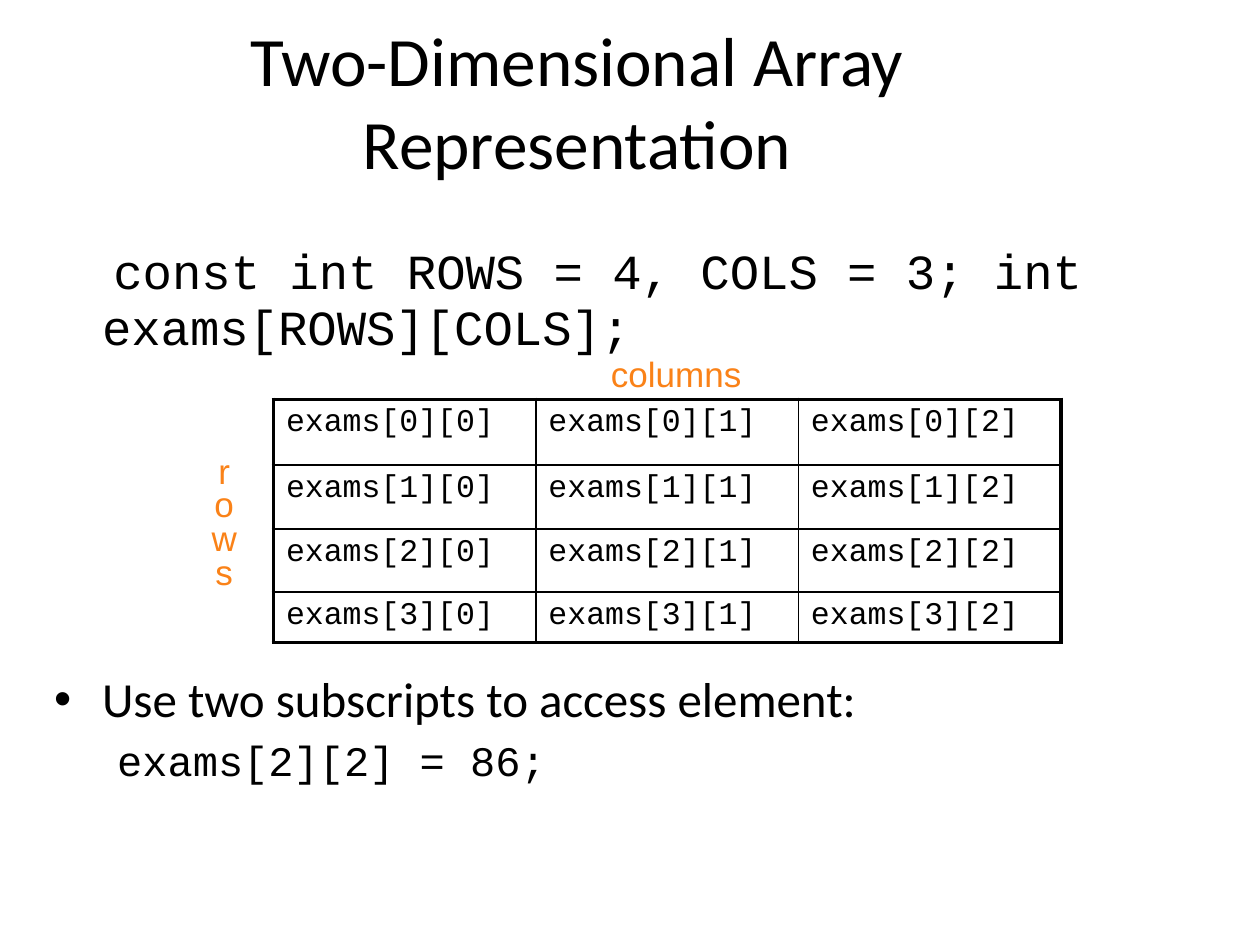
from lxml import etree
from pptx import Presentation
from pptx.dml.color import RGBColor
from pptx.enum.text import MSO_ANCHOR, MSO_AUTO_SIZE, PP_ALIGN
from pptx.oxml.ns import qn
from pptx.util import Inches, Pt

BLACK = RGBColor(0, 0, 0)
ORANGE = RGBColor(0xFA, 0x82, 0x18)
CENTER = PP_ALIGN.CENTER
MIDDLE = MSO_ANCHOR.MIDDLE
NO_FIT = MSO_AUTO_SIZE.NONE
GROW = MSO_AUTO_SIZE.SHAPE_TO_FIT_TEXT
MONO, SANS, LABEL = "Courier New", "Calibri", "Arial"

TITLE = "Two-Dimensional Array Representation"
# text, font, size, level, left margin, first indent, line spacing, space before, bullet
BODY = [
    ("const int ROWS = 4, COLS = 3; int exams[ROWS][COLS];",
     MONO, 28, 0, 0.38, 0.09, 0.95, 0, None),
    ("Use two subscripts to access element:",
     SANS, 28, 0, 0.38, -0.38, 0.9, 182, "•"),
    ("exams[2][2] = 86;", MONO, 24, 1, 0.81, -0.31, 0.9, 7, None),
]
LABELS = [
    (["columns"], (4.75, 2.75, 1.24, 0.43), None, 1),
    (list("rows"), (1.58, 3.58, 0.4, 1.17), CENTER, 0.8),
]
HEIGHTS = [0.52, 0.51, 0.5, 0.4]
COLS, WIDE = 3, 6.25
THIN, THICK = 1, 2.25


def place(shape, left, top, width, height):
    shape.left, shape.top = Inches(left), Inches(top)
    shape.width, shape.height = Inches(width), Inches(height)


def style(par, font, size, color=BLACK):
    for run in par.runs:
        run.font.name = font
        run.font.size = Pt(size)
        run.font.color.rgb = color


def indent(par, margin, first, bullet):
    props = par._p.get_or_add_pPr()
    props.set("marL", str(Inches(margin)))
    props.set("indent", str(Inches(first)))
    if bullet:
        etree.SubElement(props, qn("a:buChar"), char=bullet)
    else:
        etree.SubElement(props, qn("a:buNone"))


def border(cell, sides):
    props = cell._tc.get_or_add_tcPr()
    for spot, (side, width) in enumerate(sides.items()):
        line = etree.Element(qn(f"a:ln{side}"), w=str(Pt(width)))
        fill = etree.SubElement(line, qn("a:solidFill"))
        etree.SubElement(fill, qn("a:srgbClr"), val=str(BLACK))
        props.insert(spot, line)


def add_grid(slide):
    rows = len(HEIGHTS)
    table = slide.shapes.add_table(
        rows, COLS, Inches(2.17), Inches(3.17),
        Inches(WIDE), Inches(sum(HEIGHTS))).table
    table.first_row = table.horz_banding = False
    for col in table.columns:
        col.width = Inches(WIDE / COLS)
    for r, height in enumerate(HEIGHTS):
        table.rows[r].height = Inches(height)
        for c in range(COLS):
            cell = table.cell(r, c)
            cell.text = f"exams[{r}][{c}]"
            style(cell.text_frame.paragraphs[0], MONO, 18)
            cell.fill.background()
            border(cell, {
                "L": THICK if c == 0 else THIN,
                "R": THICK if c == COLS - 1 else THIN,
                "T": THICK if r == 0 else THIN,
                "B": THICK if r == rows - 1 else THIN,
            })


def main():
    deck = Presentation()
    deck.slide_width, deck.slide_height = Inches(10), Inches(7.5)
    slide = deck.slides.add_slide(deck.slide_layouts[1])

    title, body = slide.placeholders
    place(title, 0.33, 0.17, 8.5, 1.25)
    frame = title.text_frame
    frame.text = TITLE
    frame.auto_size = NO_FIT
    frame.vertical_anchor = MIDDLE
    frame.paragraphs[0].alignment = CENTER
    style(frame.paragraphs[0], SANS, 39.6)

    place(body, 0.33, 1.42, 8.5, 5.33)
    frame = body.text_frame
    frame.text = "\n".join(item[0] for item in BODY)
    frame.auto_size = NO_FIT
    frame.margin_top = Inches(0.52)
    for par, item in zip(frame.paragraphs, BODY):
        _, font, size, level, margin, first, lines, space, bullet = item
        par.level = level
        par.line_spacing = lines
        par.space_before = Pt(space)
        indent(par, margin, first, bullet)
        style(par, font, size)

    add_grid(slide)

    for words, spot, align, lines in LABELS:
        box = slide.shapes.add_textbox(*map(Inches, spot))
        frame = box.text_frame
        frame.text = "\n".join(words)
        frame.word_wrap = False
        frame.auto_size = GROW
        for par in frame.paragraphs:
            par.alignment = align
            par.line_spacing = lines
            style(par, LABEL, 20, ORANGE)

    deck.save("out.pptx")


if __name__ == "__main__":
    main()
